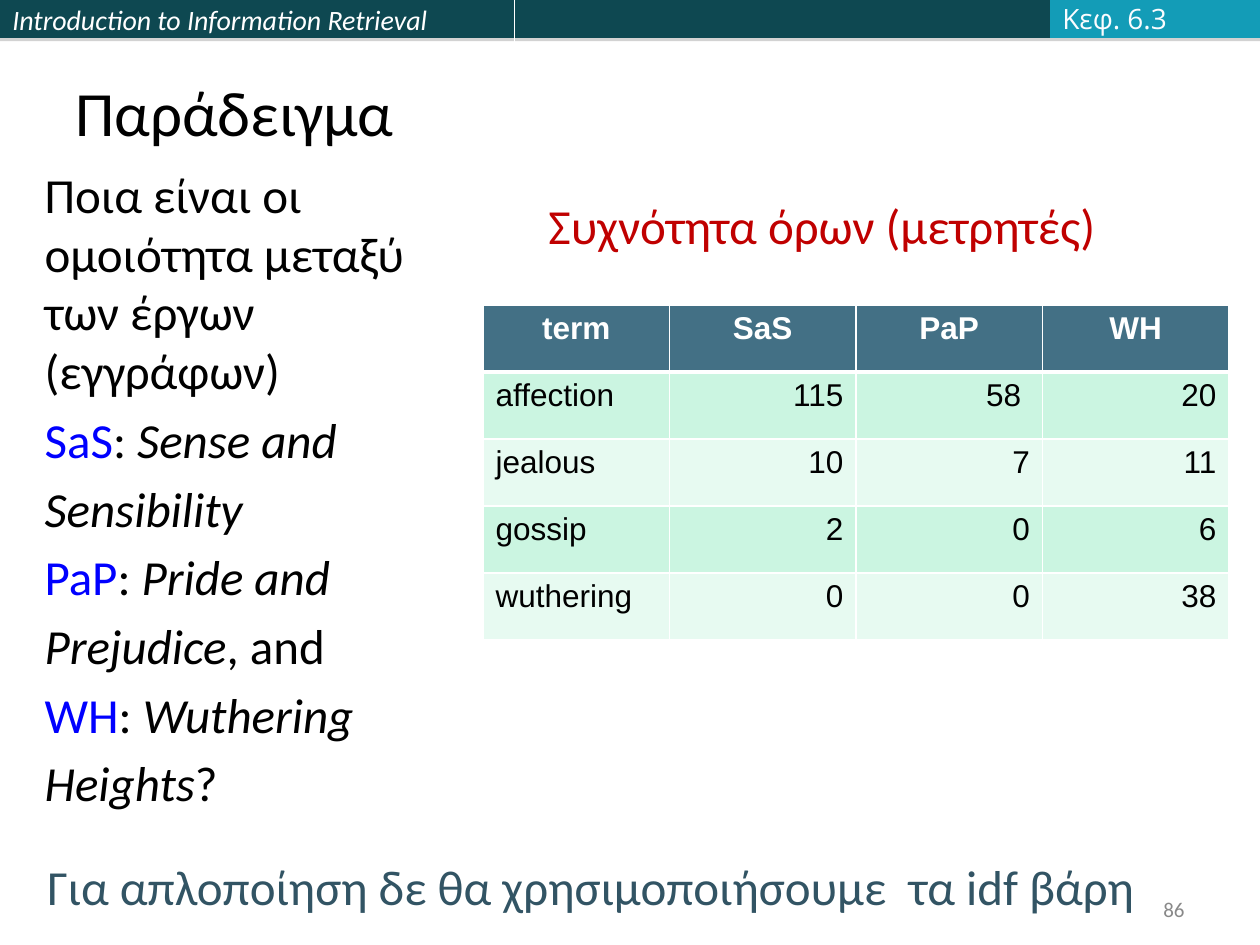
from lxml.etree import SubElement
from pptx import Presentation
from pptx.dml.color import RGBColor
from pptx.enum.shapes import MSO_SHAPE
from pptx.enum.text import MSO_ANCHOR, MSO_AUTO_SIZE, PP_ALIGN
from pptx.oxml.ns import qn
from pptx.util import Emu, Pt

SCALE = 914400 / 126
WHITE, BLACK, BLUE = "FFFFFF", "000000", "0000FF"
TEAL, CYAN, SLATE = "0E4851", "139CB7", "437085"
BANDS = ["CBF5E1", "E7FAF1"]

ROWS = [
    ["term", "SaS", "PaP", "WH"],
    ["affection", "115", "58 ", "20"],
    ["jealous", "10", "7", "11"],
    ["gossip", "2", "0", "6"],
    ["wuthering", "0", "0", "38"],
]
WORKS = [
    ("SaS", "Sense and", "Sensibility", ""),
    ("PaP", "Pride and", "Prejudice", ", and"),
    ("WH", "Wuthering", "Heights", "?"),
]


def px(*nums):
    return [Emu(round(n * SCALE)) for n in nums]


def tint(code):
    return RGBColor.from_string(code)


def paint(fill, code):
    fill.solid()
    fill.fore_color.rgb = tint(code)


def write(frame, text, size=28, font="Calibri", color=BLACK, bold=False,
          slant=False, align=PP_ALIGN.LEFT, new=False):
    """Add a run of text to the last paragraph, or to a new one."""
    para = frame.add_paragraph() if new else frame.paragraphs[-1]
    para.alignment = align
    run = para.add_run()
    run.text = text
    face = run.font
    face.size, face.name = Pt(size), font
    face.bold, face.italic = bold, slant
    face.color.rgb = tint(color)
    return para


def place(shape, *box):
    shape.left, shape.top, shape.width, shape.height = px(*box)


def label(slide, text, *box, wrap=True, grow=True, mid=False, **form):
    frame = slide.shapes.add_textbox(*px(*box)).text_frame
    frame.word_wrap = wrap
    frame.auto_size = (MSO_AUTO_SIZE.SHAPE_TO_FIT_TEXT if grow
                       else MSO_AUTO_SIZE.NONE)
    frame.vertical_anchor = MSO_ANCHOR.MIDDLE if mid else MSO_ANCHOR.TOP
    write(frame, text, **form)


def bar(slide, left, width, color):
    shape = slide.shapes.add_shape(MSO_SHAPE.RECTANGLE, *px(left, 0, width, 38))
    paint(shape.fill, color)
    shape.line.fill.background()
    # Thin grey shadow straight below the bar
    shape.shadow.inherit = False
    effects = shape._element.spPr.find(qn("a:effectLst"))
    shade = SubElement(effects, qn("a:outerShdw"), blurRad="0",
                       dist=str(Pt(1.8)), dir="5400000", rotWithShape="0")
    grey = SubElement(shade, qn("a:srgbClr"), val="808080")
    SubElement(grey, qn("a:alpha"), val="35000")
    return shape.text_frame


def border(cell, side, width):
    line = SubElement(cell._tc.get_or_add_tcPr(), qn("a:ln" + side),
                      w=str(Pt(width)))
    fill = SubElement(line, qn("a:solidFill"))
    SubElement(fill, qn("a:srgbClr"), val=WHITE)


def grid(slide, *box):
    table = slide.shapes.add_table(len(ROWS), len(ROWS[0]), *px(*box)).table
    table.horz_banding = False
    for r, row in enumerate(ROWS):
        head = r == 0
        for c, text in enumerate(row):
            cell = table.cell(r, c)
            # A thick rule parts the header from the rows
            thick = {"T": r == 1, "B": head}
            for side in "LRTB":
                border(cell, side, 3 if thick.get(side) else 1)
            paint(cell.fill, SLATE if head else BANDS[(r - 1) % 2])
            align = (PP_ALIGN.CENTER if head
                     else PP_ALIGN.RIGHT if c else PP_ALIGN.LEFT)
            write(cell.text_frame, text, size=18, font="Arial", bold=head,
                  color=WHITE if head else BLACK, align=align)


def plain(para):
    """Take the bullet and indent off a body paragraph."""
    props = para._p.get_or_add_pPr()
    props.set("marL", "0")
    props.set("indent", "0")
    SubElement(props, qn("a:buNone"))


def question(body):
    frame = body.text_frame
    frame.auto_size = MSO_AUTO_SIZE.NONE
    frame.vertical_anchor = MSO_ANCHOR.TOP
    write(frame, "Ποια είναι οι ομοιότητα μεταξύ των έργων  (εγγράφων)")
    for code, start, rest, tail in WORKS:
        write(frame, code, color=BLUE, new=True)
        write(frame, ": ")
        write(frame, start, slant=True)
        write(frame, rest, slant=True, new=True)
        if tail:
            write(frame, tail)
    for para in frame.paragraphs:
        plain(para)


def main():
    deck = Presentation()
    deck.slide_width, deck.slide_height = px(1260, 945)
    slide = deck.slides.add_slide(deck.slide_layouts[1])
    title, body = slide.placeholders

    # Top band
    frame = bar(slide, 0, 514, TEAL)
    frame.vertical_anchor = MSO_ANCHOR.MIDDLE
    write(frame, "Introduction to Information Retrieval", size=16,
          color=WHITE, slant=True)
    bar(slide, 515, 535, TEAL)
    bar(slide, 1050, 210, CYAN)
    label(slide, "Κεφ. 6.3", 1050, -5, 139, 47, wrap=False, mid=True,
          size=16, font="Open Sans", color="FBFCFF")

    # Title and question
    place(title, 63, -5, 1187, 160)
    title.text_frame.auto_size = MSO_AUTO_SIZE.NONE
    title.text_frame.vertical_anchor = MSO_ANCHOR.BOTTOM
    write(title.text_frame, "Παράδειγμα", size=36)
    place(body, 32, 158, 414, 646)
    question(body)

    # Term counts
    label(slide, "Συχνότητα όρων (μετρητές)", 536, 189, 672, 72,
          color="C00000")
    grid(slide, 483, 305, 746, 335)

    # Remark and page number
    label(slide, "Για απλοποίηση δε θα χρησιμοποιήσουμε  τα idf βάρη",
          35, 850, 1124, 72, wrap=False, color="325464")
    label(slide, "86", 903, 892, 294, 34, grow=False, mid=True, size=12,
          color="898989", align=PP_ALIGN.RIGHT)

    deck.save("out.pptx")


if __name__ == "__main__":
    main()
